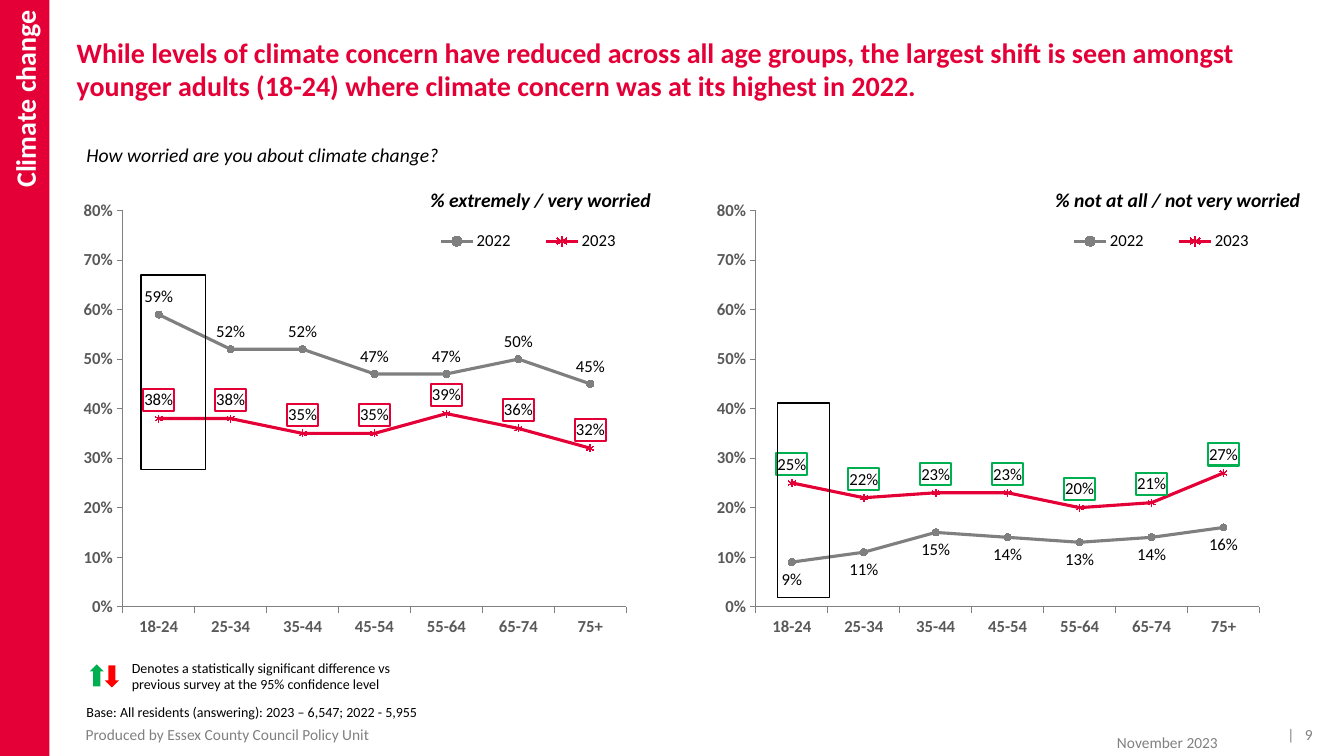
from lxml import etree
from pptx import Presentation
from pptx.chart.data import CategoryChartData
from pptx.dml.color import RGBColor
from pptx.enum import chart as charts, shapes, text
from pptx.oxml import parse_xml
from pptx.oxml.ns import nsdecls, qn
from pptx.util import Inches, Pt

RED = RGBColor(0xE4, 0x00, 0x37)
GREEN = RGBColor(0x00, 0xB0, 0x50)
ARROW_RED = RGBColor(0xFF, 0x00, 0x00)
GREY = RGBColor(0x80, 0x80, 0x80)
LINE_GREY = RGBColor(0x7F, 0x7F, 0x7F)
AXIS_GREY = RGBColor(0x59, 0x59, 0x59)
BLACK = RGBColor(0, 0, 0)
WHITE = RGBColor(0xFF, 0xFF, 0xFF)
FONT = "Calibri"
AGE_GROUPS = ["18-24", "25-34", "35-44", "45-54", "55-64", "65-74", "75+"]


def style_font(font, size, color=BLACK, bold=False, italic=False):
    font.name = FONT
    font.size = Pt(size)
    font.color.rgb = color
    font.bold = bold
    font.italic = italic


def write(frame, words, size, color=BLACK, bold=False, italic=False,
          align=text.PP_ALIGN.LEFT):
    frame.text = words
    frame.word_wrap = True
    para = frame.paragraphs[0]
    para.alignment = align
    style_font(para.runs[0].font, size, color, bold, italic)


def add_text(page, place, words, size, **style):
    box = page.shapes.add_textbox(*map(Inches, place))
    write(box.text_frame, words, size, **style)
    return box


def add_footer(page, place, words, align=text.PP_ALIGN.RIGHT):
    frame = add_text(page, place, words, 11, color=GREY, align=align).text_frame
    frame.vertical_anchor = text.MSO_ANCHOR.MIDDLE
    frame.margin_left, frame.margin_right = Inches(0.09), 0


def add_filled(page, kind, place, color):
    shape = page.shapes.add_shape(kind, *map(Inches, place))
    shape.shadow.inherit = False
    shape.fill.solid()
    shape.fill.fore_color.rgb = color
    shape.line.fill.background()
    return shape


def add_highlight(page, place):
    frame = page.shapes.add_shape(shapes.MSO_SHAPE.RECTANGLE, *map(Inches, place))
    frame.shadow.inherit = False
    frame.fill.background()
    frame.line.color.rgb = BLACK
    frame.line.width = Pt(1)


def set_layout(parent, index, x, y, width, height, inner=False):
    """Give a chart part a fixed place, in fractions of the chart."""
    for old in parent.findall(qn("c:layout")):
        parent.remove(old)
    layout = parse_xml(f'<c:layout {nsdecls("c")}><c:manualLayout/></c:layout>')
    settings = [("layoutTarget", "inner")] if inner else []
    settings += [("xMode", "edge"), ("yMode", "edge"),
                 ("x", x), ("y", y), ("w", width), ("h", height)]
    for name, value in settings:
        etree.SubElement(layout[0], qn(f"c:{name}")).set("val", str(value))
    parent.insert(index, layout)


def style_axis(axis):
    axis.has_major_gridlines = False
    axis.major_tick_mark = charts.XL_TICK_MARK.OUTSIDE
    axis.minor_tick_mark = charts.XL_TICK_MARK.NONE
    axis.format.line.color.rgb = GREY
    axis.format.line.width = Pt(0.75)
    style_font(axis.tick_labels.font, 12, AXIS_GREY, bold=True)


def style_series(series, color, marker, label_position, label_border=None):
    series.smooth = False
    series.format.line.color.rgb = color
    series.format.line.width = Pt(2.25)
    series.marker.style = marker
    series.marker.size = 5
    for part in (series.marker.format.fill, series.marker.format.line.fill):
        part.solid()
        part.fore_color.rgb = color
    labels = series.data_labels
    labels.show_value = True
    labels.number_format = "0%"
    labels.number_format_is_linked = False
    labels.position = label_position
    style_font(labels.font, 12)
    if label_border is not None:
        border = parse_xml(
            f'<c:spPr {nsdecls("c", "a")}><a:noFill/><a:ln w="19050"><a:solidFill>'
            f'<a:srgbClr val="{label_border}"/></a:solidFill></a:ln></c:spPr>')
        labels._element.find(qn("c:txPr")).addprevious(border)


def add_line_chart(page, left, values_2022, values_2023, position_2022, label_border):
    data = CategoryChartData(number_format="0%")
    data.categories = AGE_GROUPS
    data.add_series("2022", values_2022)
    data.add_series("2023", values_2023)
    chart = page.shapes.add_chart(
        charts.XL_CHART_TYPE.LINE_MARKERS, Inches(left), Inches(1.99),
        Inches(5.99), Inches(4.73), data).chart
    style_font(chart.font, 10)
    chart.has_title = False
    chart.plots[0].vary_by_categories = False

    style_axis(chart.category_axis)
    style_axis(chart.value_axis)
    chart.value_axis.minimum_scale = 0
    chart.value_axis.maximum_scale = 0.8
    chart.value_axis.major_unit = 0.1
    chart.value_axis.tick_labels.number_format = "0%"
    chart.value_axis.tick_labels.number_format_is_linked = False

    above = charts.XL_LABEL_POSITION.ABOVE
    last_year, this_year = chart.plots[0].series
    style_series(last_year, LINE_GREY, charts.XL_MARKER_STYLE.CIRCLE, position_2022)
    style_series(this_year, RED, charts.XL_MARKER_STYLE.STAR, above, label_border)

    chart.has_legend = True
    chart.legend.position = charts.XL_LEGEND_POSITION.RIGHT
    chart.legend.include_in_layout = False
    style_font(chart.legend.font, 12)
    set_layout(chart.legend._element, 1, 0.54, 0.05, 0.39, 0.07)
    plot_area = chart._chartSpace.chart.plotArea
    set_layout(plot_area, 0, 0.06, 0.021, 0.838, 0.831, inner=True)


def add_chart_heading(page, left, words):
    box = add_text(page, (left, 1.82, 2.83, 0.34), words, 14, bold=True, italic=True)
    box.text_frame.paragraphs[0].space_before = Pt(6)


def add_title(page, words):
    title = page.shapes.title
    title.left, title.top = Inches(0.76), Inches(0.35)
    title.width, title.height = Inches(12.34), Inches(1.08)
    frame = title.text_frame
    write(frame, words, 20, RED, bold=True)
    frame.auto_size = text.MSO_AUTO_SIZE.NONE
    frame.vertical_anchor = text.MSO_ANCHOR.TOP
    frame.margin_left = frame.margin_right = frame.margin_top = frame.margin_bottom = 0


def add_side_band(page, words):
    band = add_filled(page, shapes.MSO_SHAPE.RECTANGLE, (0, 0, 0.49, 7.5), RED)
    frame = band.text_frame
    write(frame, words, 20, WHITE, bold=True, align=text.PP_ALIGN.RIGHT)
    frame.vertical_anchor = text.MSO_ANCHOR.MIDDLE
    frame.margin_top = Inches(0.1)
    frame._txBody.bodyPr.set("vert", "vert270")


def main():
    deck = Presentation()
    deck.slide_width, deck.slide_height = Inches(13.33), Inches(7.5)
    page = deck.slides.add_slide(deck.slide_layouts[5])

    # Title, side band and question
    add_title(page, "While levels of climate concern have reduced across all age groups, "
                    "the largest shift is seen amongst younger adults (18-24) where "
                    "climate concern was at its highest in 2022.")
    add_side_band(page, "Climate change")
    add_text(page, (0.76, 1.37, 8.63, 0.34),
             "How worried are you about climate change?", 14, italic=True)

    # Worried residents
    add_chart_heading(page, 4.17, "% extremely / very worried")
    add_line_chart(page, 0.83, (0.59, 0.52, 0.52, 0.47, 0.47, 0.5, 0.45),
                   (0.38, 0.38, 0.35, 0.35, 0.39, 0.36, 0.32),
                   charts.XL_LABEL_POSITION.ABOVE, RED)
    add_highlight(page, (1.4, 2.73, 0.64, 1.93))

    # Unworried residents
    add_chart_heading(page, 10.37, "% not at all / not very worried")
    add_line_chart(page, 7.11, (0.09, 0.11, 0.15, 0.14, 0.13, 0.14, 0.16),
                   (0.25, 0.22, 0.23, 0.23, 0.2, 0.21, 0.27),
                   charts.XL_LABEL_POSITION.BELOW, GREEN)
    add_highlight(page, (7.71, 4, 0.52, 1.93))

    # Significance key and base
    add_filled(page, shapes.MSO_SHAPE.UP_ARROW, (0.89, 6.59, 0.14, 0.22), GREEN)
    add_filled(page, shapes.MSO_SHAPE.DOWN_ARROW, (1.04, 6.6, 0.14, 0.22), ARROW_RED)
    add_text(page, (1.21, 6.49, 2.96, 0.44), "Denotes a statistically significant "
             "difference vs previous survey at the 95% confidence level", 10)
    add_text(page, (0.76, 6.93, 6.13, 0.27),
             "Base: All residents (answering): 2023 – 6,547; 2022 - 5,955", 10)

    # Footer
    add_footer(page, (0.76, 7.21, 6.54, 0.15),
               "Produced by Essex County Council Policy Unit", text.PP_ALIGN.LEFT)
    add_footer(page, (9.68, 7.29, 2.4, 0.15), "November 2023")
    add_footer(page, (12.17, 7.21, 0.85, 0.15), "|\u00a0\u00a0 9".replace("\u00a0", " "))

    deck.save("out.pptx")


if __name__ == "__main__":
    main()
